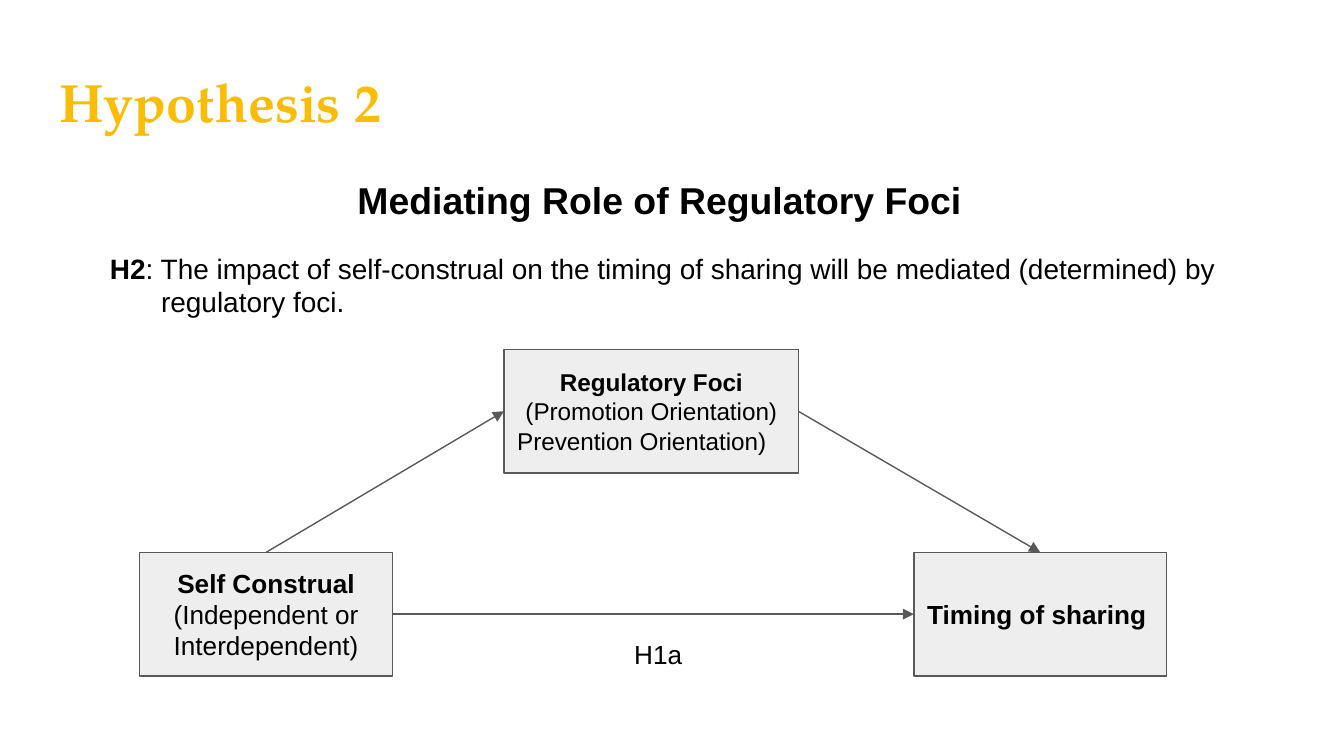
from lxml.etree import SubElement
from pptx import Presentation
from pptx.dml.color import RGBColor
from pptx.enum.shapes import MSO_CONNECTOR, MSO_SHAPE
from pptx.enum.text import MSO_ANCHOR, MSO_AUTO_SIZE, PP_ALIGN
from pptx.oxml.ns import qn
from pptx.util import Inches, Pt

BLACK, GOLD, GREY, PALE = "000000", "FBBC04", "595959", "EEEEEE"
LEFT, CENTER = PP_ALIGN.LEFT, PP_ALIGN.CENTER
TOP_SITE, LEFT_SITE, RIGHT_SITE = 0, 1, 3
BOX_TOP, BOX_HEIGHT = 4.11, 0.92


def rgb(value):
    return RGBColor.from_string(value)


def write(sp, paragraphs, size, font="Arial", color=BLACK, anchor=MSO_ANCHOR.TOP):
    """Each paragraph is (alignment, [(text, bold), ...])."""
    tf = sp.text_frame
    frame = {"word_wrap": True, "auto_size": MSO_AUTO_SIZE.NONE, "vertical_anchor": anchor}
    for side in ("left", "right", "top", "bottom"):
        frame["margin_" + side] = Inches(0.1)
    for name, value in frame.items():
        setattr(tf, name, value)
    for i, (align, runs) in enumerate(paragraphs):
        p = tf.paragraphs[0] if i == 0 else tf.add_paragraph()
        p.alignment = align
        p.space_before = Pt(0)
        for text, bold in runs:
            r = p.add_run()
            r.text = text
            for name, value in {"name": font, "size": Pt(size), "bold": bold}.items():
                setattr(r.font, name, value)
            r.font.color.rgb = rgb(color)


def add_title(s, text):
    sp = s.shapes.title
    place = {"left": 0.34, "top": 0.41, "width": 9.32, "height": 0.71}
    for name, value in place.items():
        setattr(sp, name, Inches(value))
    write(sp, [(LEFT, [(text, True)])], 28.8, "TeX Gyre Pagella", GOLD)


def add_text(s, at, paragraphs, size):
    sp = s.shapes.add_textbox(*map(Inches, at))
    write(sp, paragraphs, size)
    return sp


def add_box(s, left, top, width, paragraphs, size):
    at = map(Inches, (left, top, width, BOX_HEIGHT))
    sp = s.shapes.add_shape(MSO_SHAPE.RECTANGLE, *at)
    sp.shadow.inherit = False
    sp.fill.solid()
    sp.fill.fore_color.rgb = rgb(PALE)
    sp.line.color.rgb = rgb(GREY)
    sp.line.width = Pt(0.75)
    write(sp, paragraphs, size, anchor=MSO_ANCHOR.MIDDLE)
    return sp


def add_arrow(s, start, start_site, end, end_site):
    line = s.shapes.add_connector(MSO_CONNECTOR.STRAIGHT, 0, 0, 0, 0)
    line.begin_connect(start, start_site)
    line.end_connect(end, end_site)
    line.line.color.rgb = rgb(GREY)
    line.line.width = Pt(0.75)
    spPr = line._element.spPr
    SubElement(spPr.find(qn("a:ln")), qn("a:tailEnd"), type="triangle")
    SubElement(spPr, qn("a:effectLst"))


def main():
    prs = Presentation()
    # Widescreen, 16:9
    prs.slide_width = Inches(10)
    prs.slide_height = prs.slide_width * 9 // 16
    s = prs.slides.add_slide(prs.slide_layouts[5])

    # Title, heading and hypothesis
    add_title(s, "Hypothesis 2")
    add_text(s, (0.36, 1.22, 9.1, 0.62),
             [(CENTER, [("Mediating Role of Regulatory Foci", True)])], 20)
    hypothesis = add_text(s, (0.22, 1.77, 9.57, 1.6), [(LEFT, [
        ("H2", True),
        (": The impact of self-construal on the timing of sharing will be "
         "mediated (determined) by regulatory foci.", False)])], 15)
    pPr = hypothesis.text_frame.paragraphs[0]._p.get_or_add_pPr()
    pPr.set("marL", str(Inches(0.88)))
    pPr.set("indent", str(Inches(-0.38)))

    # Mediation model: cause, outcome and mediator
    construal = add_box(s, 1.04, BOX_TOP, 1.88, [(CENTER, [
        ("Self Construal", True), (" (Independent or Interdependent)", False)])], 14)
    timing = add_box(s, 6.8, BOX_TOP, 1.88, [(LEFT, [("Timing of sharing", True)])], 14)
    foci = add_box(s, 3.75, 2.6, 2.19, [
        (CENTER, [("Regulatory Foci ", True), ("(Promotion Orientation)", False)]),
        (LEFT, [("Prevention Orientation)", False)])], 13)

    # Paths between the boxes
    add_arrow(s, construal, TOP_SITE, foci, LEFT_SITE)
    add_arrow(s, foci, RIGHT_SITE, timing, TOP_SITE)
    add_arrow(s, construal, RIGHT_SITE, timing, LEFT_SITE)
    add_text(s, (4.62, 4.65, 0.81, 0.39), [(LEFT, [("H1a", False)])], 14)

    prs.save("out.pptx")


if __name__ == "__main__":
    main()
